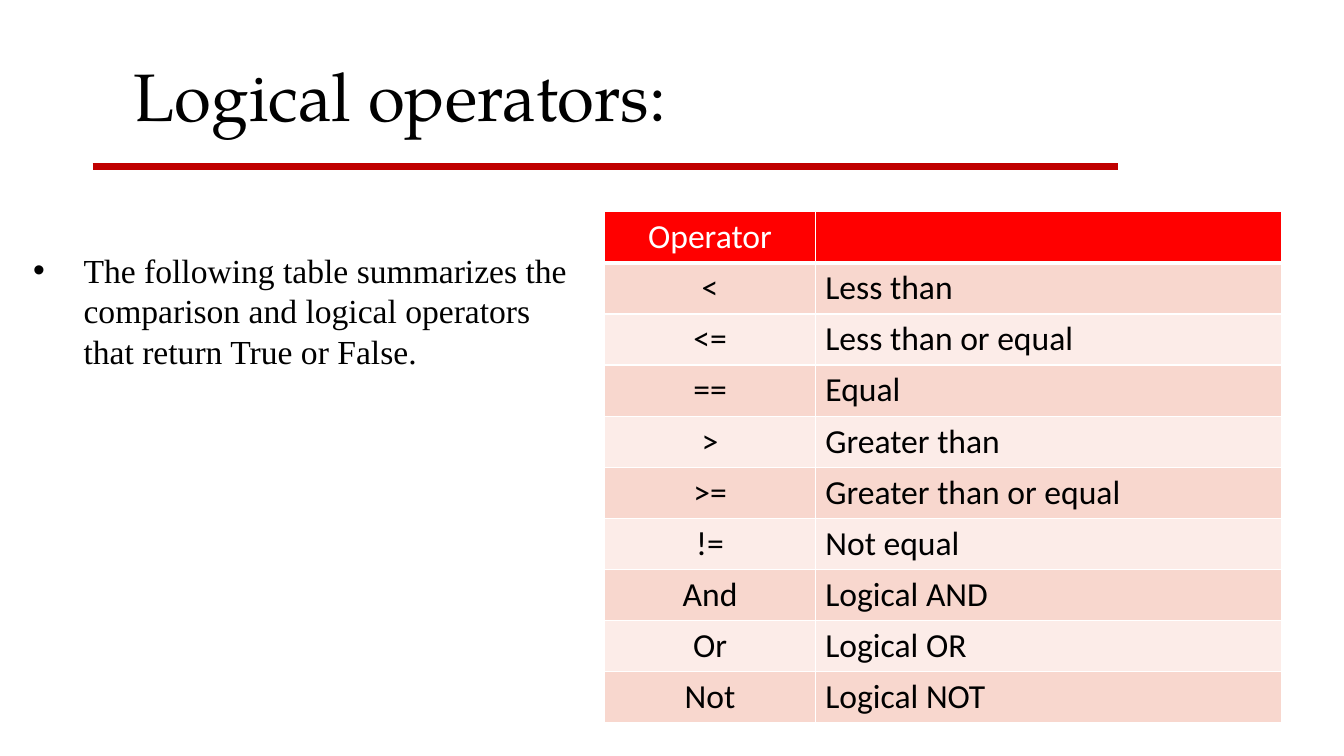
from lxml.etree import SubElement
from pptx import Presentation
from pptx.dml.color import RGBColor
from pptx.enum.shapes import MSO_CONNECTOR
from pptx.enum.text import MSO_ANCHOR, MSO_AUTO_SIZE, PP_ALIGN
from pptx.oxml import parse_xml
from pptx.oxml.ns import nsdecls, qn
from pptx.util import Pt

TITLE = "Logical operators:"
SUMMARY = ("The following table summarizes the comparison and logical "
           "operators that return True or False.")
OPERATORS = [
    ("Operator", ""),
    ("<", "Less than"),
    ("<=", "Less than or equal"),
    ("==", "Equal"),
    (">", "Greater than"),
    (">=", "Greater than or equal"),
    ("!=", "Not equal"),
    ("And", "Logical AND"),
    ("Or", "Logical OR"),
    ("Not", "Logical NOT"),
]
COLORS = {"text": "000000", "white": "FFFFFF", "header": "FF0000",
          "odd": "F8D7CE", "even": "FCECE8", "rule": "C00000"}
COLUMN_WIDTHS = (150.4, 333.4)
ROW_HEIGHT = 36
INDENT = 36


def color(name):
    return RGBColor.from_string(COLORS[name])


def set_font(para, name, size, color_name="text"):
    para.font.name = name
    para.font.size = Pt(size)
    para.font.color.rgb = color(color_name)


def add_text(page, text, left, top, width, height, font, size):
    box = page.shapes.add_textbox(Pt(left), Pt(top), Pt(width), Pt(height))
    box.text_frame.word_wrap = True
    para = box.text_frame.paragraphs[0]
    para.text = text
    set_font(para, font, size)
    return box.text_frame, para


def add_bullet(para):
    properties = para._p.get_or_add_pPr()
    properties.set("marL", str(Pt(INDENT)))
    properties.set("indent", str(-Pt(INDENT)))
    SubElement(properties, qn("a:buFont")).set("typeface", "Arial")
    SubElement(properties, qn("a:buChar")).set("char", "•")


def add_borders(cell, bottom_width):
    """Draw white cell borders; they must come before the fill in the XML."""
    properties = cell._tc.get_or_add_tcPr()
    sides = (("L", 1), ("R", 1), ("T", 1), ("B", bottom_width))
    for position, (side, width) in enumerate(sides):
        properties.insert(position, parse_xml(
            f'<a:ln{side} {nsdecls("a")} w="{Pt(width)}"><a:solidFill>'
            f'<a:srgbClr val="{COLORS["white"]}"/></a:solidFill></a:ln{side}>'))


def add_operator_table(page):
    frame = page.shapes.add_table(
        len(OPERATORS), len(COLUMN_WIDTHS), Pt(432), Pt(151.2),
        Pt(sum(COLUMN_WIDTHS)), Pt(ROW_HEIGHT * len(OPERATORS)))
    table = frame.table
    for column, width in zip(table.columns, COLUMN_WIDTHS):
        column.width = Pt(width)
    for row, texts in enumerate(OPERATORS):
        table.rows[row].height = Pt(ROW_HEIGHT)
        is_header = row == 0
        fill = "header" if is_header else ("even", "odd")[row % 2]
        for column, text in enumerate(texts):
            cell = table.cell(row, column)
            cell.fill.solid()
            cell.fill.fore_color.rgb = color(fill)
            add_borders(cell, 3 if is_header else 1)
            para = cell.text_frame.paragraphs[0]
            para.text = text
            para.alignment = PP_ALIGN.LEFT if column else PP_ALIGN.CENTER
            set_font(para, "Calibri", 24, "white" if is_header else "text")
            para.font.bold = False


def add_title_rule(page):
    rule = page.shapes.add_connector(
        MSO_CONNECTOR.STRAIGHT, Pt(66.2), Pt(118.8), Pt(798.5), Pt(118.8))
    rule.line.color.rgb = color("rule")
    rule.line.width = Pt(5)
    SubElement(rule._element.spPr, qn("a:effectLst"))


def main():
    deck = Presentation()
    deck.slide_width, deck.slide_height = Pt(960), Pt(540)
    page = deck.slides.add_slide(deck.slide_layouts[6])

    add_operator_table(page)
    frame, para = add_text(page, SUMMARY, 16.6, 175, 406, 94.3,
                           "Times New Roman", 24)
    frame.auto_size = MSO_AUTO_SIZE.SHAPE_TO_FIT_TEXT
    add_bullet(para)
    frame, para = add_text(page, TITLE, 88.6, 18.7, 828, 104.4,
                           "TeX Gyre Pagella", 48)
    frame.vertical_anchor = MSO_ANCHOR.MIDDLE
    para.line_spacing = 0.9
    add_title_rule(page)

    deck.save("out.pptx")


if __name__ == "__main__":
    main()
